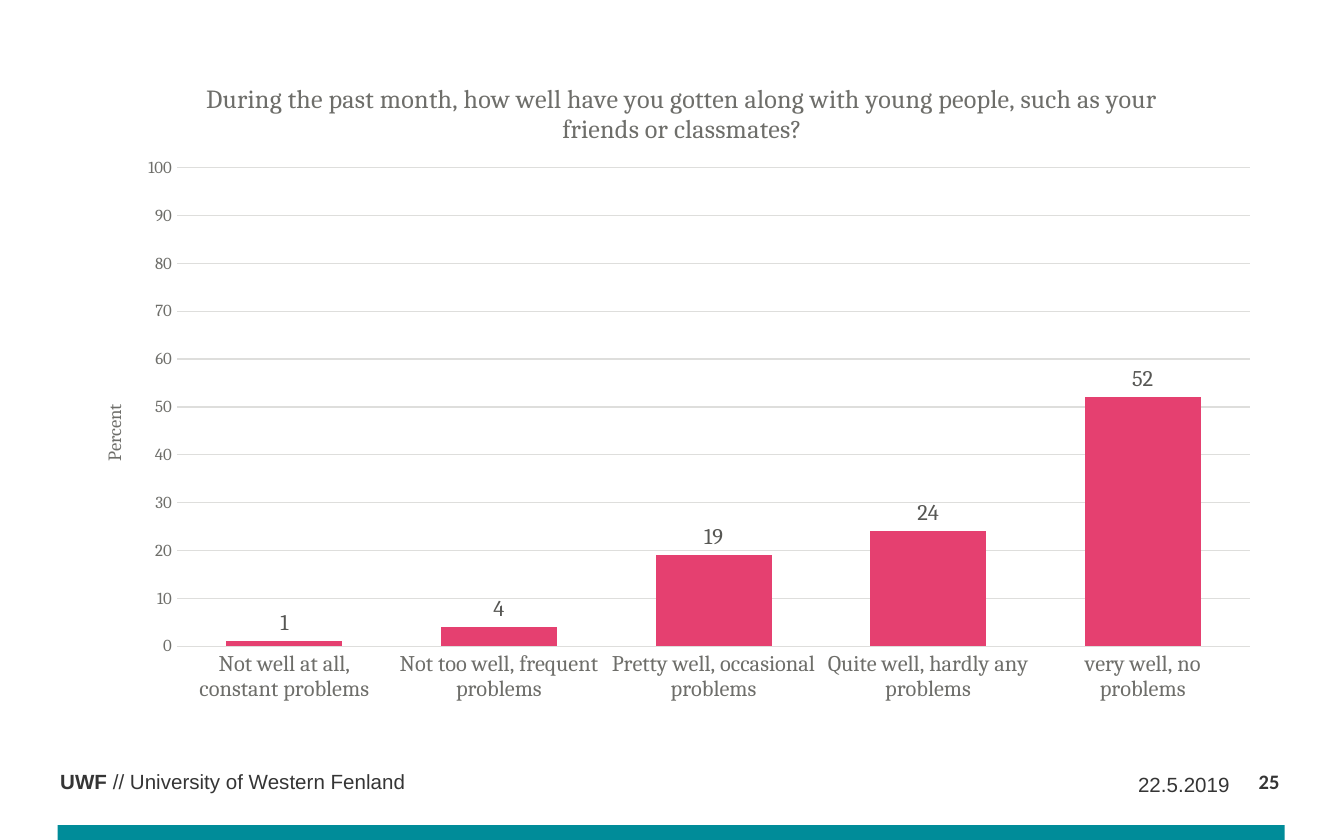
from typing import NamedTuple

from lxml.etree import SubElement
from pptx import Presentation
from pptx.chart.data import CategoryChartData
from pptx.dml.color import RGBColor
from pptx.enum.chart import XL_CHART_TYPE as ChartType
from pptx.enum.chart import XL_LABEL_POSITION as LabelPosition
from pptx.enum.chart import XL_TICK_MARK as TickMark
from pptx.enum.shapes import MSO_SHAPE as Preset
from pptx.enum.text import MSO_ANCHOR as Anchor
from pptx.enum.text import PP_ALIGN as Align
from pptx.oxml.ns import qn
from pptx.util import Inches, Pt

INK, GREY, RULE, PINK, TEAL = "353535", "6E6E6A", "DEDEDC", "E54070", "008C99"
QUESTION = (
    "During the past month, how well have you gotten along with young people, "
    "such as your friends or classmates?"
)
ANSWERS = {
    "Not well at all, constant problems": 1,
    "Not too well, frequent problems": 4,
    "Pretty well, occasional problems": 19,
    "Quite well, hardly any problems": 24,
    "very well, no problems": 52,
}


class Run(NamedTuple):
    text: str
    bold: bool = False


class FooterItem(NamedTuple):
    box: tuple[float, float, float, float]
    runs: list[Run]
    font: str = "Arial"
    align: Align = Align.RIGHT
    anchor: Anchor = Anchor.TOP
    insets: tuple[float, float] = (0, 0)


FOOTER = [
    FooterItem((0.35, 5.67, 3.86, 0.29),
               [Run("UWF", True), Run(" // University of Western Fenland")],
               align=Align.LEFT, insets=(0.1, 0.05)),
    FooterItem((8.19, 5.72, 0.96, 0.23), [Run("22.5.2019")], anchor=Anchor.MIDDLE),
    FooterItem((9.13, 5.7, 0.39, 0.23), [Run("25", True)], font="Calibri", insets=(0, 0.02)),
]


def color(hex_code: str) -> RGBColor:
    return RGBColor.from_string(hex_code)


def set_font(font, size: float, hex_code: str, name: str = "Cambria") -> None:
    font.size, font.name = Pt(size), name
    font.color.rgb = color(hex_code)


def add_footer_item(slide, item: FooterItem) -> None:
    frame = slide.shapes.add_textbox(*map(Inches, item.box)).text_frame
    frame.word_wrap = True
    frame.vertical_anchor = item.anchor
    side, top = map(Inches, item.insets)
    frame.margin_left = frame.margin_right = side
    frame.margin_top = frame.margin_bottom = top
    line = frame.paragraphs[0]
    line.alignment = item.align
    set_font(line.font, 11, INK, item.font)
    for part in item.runs:
        run = line.add_run()
        run.text, run.font.bold = part.text, part.bold


def add_bottom_band(slide) -> None:
    band = slide.shapes.add_shape(Preset.RECTANGLE, *map(Inches, (0.43, 6.14, 9.13, 0.13)))
    band.shadow.inherit = False
    band.fill.solid()
    band.fill.fore_color.rgb = color(TEAL)
    band.line.fill.background()


def place(parent, index: int, **fractions: float) -> None:
    for old in parent.findall(qn("c:layout")):
        parent.remove(old)
    layout = parent.makeelement(qn("c:layout"), {})
    parent.insert(index, layout)
    manual = SubElement(layout, qn("c:manualLayout"))
    if "w" in fractions:
        SubElement(manual, qn("c:layoutTarget"), val="inner")
    for side in ("x", "y"):
        SubElement(manual, qn(f"c:{side}Mode"), val="edge")
    for key, value in fractions.items():
        SubElement(manual, qn(f"c:{key}"), val=str(value))


def write_title(title, text: str, size: float, x: float, y: float) -> None:
    title.text_frame.text = text
    font = title.text_frame.paragraphs[0].font
    set_font(font, size, GREY)
    font.bold = False
    place(title._element, 1, x=x, y=y)


def style_line(line, hex_code: str) -> None:
    line.color.rgb = color(hex_code)
    line.width = Pt(0.75)


def add_answer_chart(slide) -> None:
    """Draw the share of each answer as a column chart."""
    answers = CategoryChartData(number_format="#,##0")
    answers.categories = list(ANSWERS)
    answers.add_series("Series 1", list(ANSWERS.values()))
    chart = slide.shapes.add_chart(
        ChartType.COLUMN_CLUSTERED, *map(Inches, (0.51, 0.37, 8.98, 4.96)), answers
    ).chart
    set_font(chart.font, 10, "1D1D1C")
    chart.has_legend = False
    write_title(chart.chart_title, QUESTION, 14, x=0.11, y=0.04)
    place(chart._chartSpace.chart.plotArea, 0, x=0.09, y=0.177, w=0.889, h=0.718)

    answer_axis, percent_axis = chart.category_axis, chart.value_axis
    for axis, size in ((answer_axis, 12), (percent_axis, 9)):
        axis.major_tick_mark = axis.minor_tick_mark = TickMark.NONE
        set_font(axis.tick_labels.font, size, GREY)
    style_line(answer_axis.format.line, RULE)
    percent_axis.format.line.fill.background()
    percent_axis.minimum_scale, percent_axis.maximum_scale = 0, 100
    percent_axis.major_unit = 10
    style_line(percent_axis.major_gridlines.format.line, RULE)
    write_title(percent_axis.axis_title, "Percent", 10, x=0.025, y=0.527)

    columns = chart.plots[0]
    columns.vary_by_categories = False
    columns.gap_width, columns.overlap = 85, -27
    fill = columns.series[0].format.fill
    fill.solid()
    fill.fore_color.rgb = color(PINK)
    columns.has_data_labels = True
    labels = columns.data_labels
    labels.show_value = True
    labels.number_format, labels.number_format_is_linked = "#,##0", False
    labels.position = LabelPosition.OUTSIDE_END
    set_font(labels.font, 12, "575754")


def main() -> None:
    deck = Presentation()
    deck.slide_width, deck.slide_height = Inches(10), Inches(6.25)
    slide = deck.slides.add_slide(deck.slide_layouts[6])
    add_bottom_band(slide)
    for item in FOOTER:
        add_footer_item(slide, item)
    add_answer_chart(slide)
    deck.save("out.pptx")


if __name__ == "__main__":
    main()
